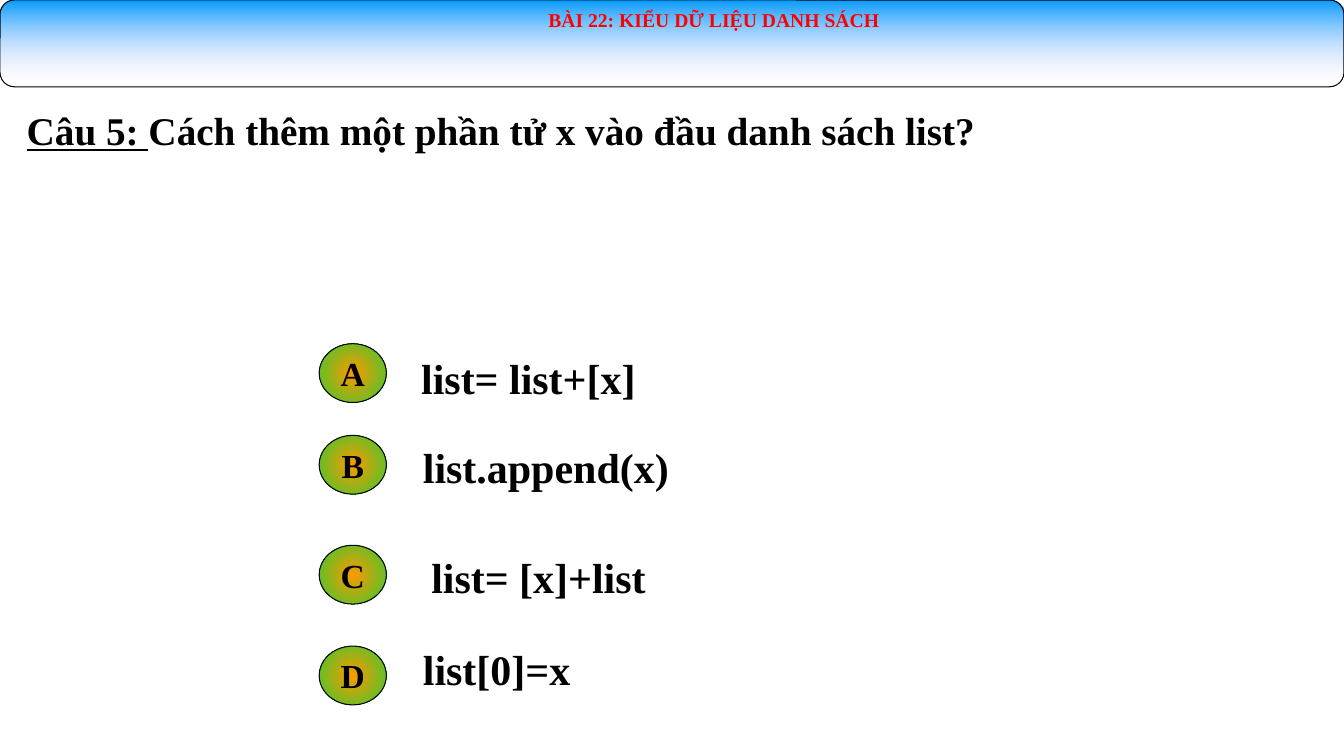
"""Build a multiple-choice quiz slide about adding an element to a list."""
from dataclasses import dataclass

from lxml.etree import SubElement
from pptx import Presentation
from pptx.dml.color import RGBColor
from pptx.enum.shapes import MSO_SHAPE
from pptx.enum.text import MSO_ANCHOR, MSO_AUTO_SIZE, PP_ALIGN
from pptx.oxml.ns import qn
from pptx.util import Pt

TITLE = "BÀI 22: KIỂU DỮ LIỆU DANH SÁCH"
QUESTION = ("Câu 5: ", "Cách thêm một phần tử x vào đầu danh sách list?")
ANSWERS = [
    {"letter": "A", "text": "list= list+[x]", "badge_top": 245.5, "box": (293.8, 252, 169, 40), "spacing": 0.9},
    {"letter": "B", "text": "list.append(x)", "badge_top": 311, "box": (295, 311.8, 192, 44), "spacing": 1.0},
    {"letter": "C", "text": "list= [x]+list", "badge_top": 389.5, "box": (301, 390.2, 169, 44), "spacing": 1.0},
    {"letter": "D", "text": "list[0]=x", "badge_top": 461.5, "box": (295, 460, 121, 40), "spacing": 0.9},
]
SLIDE = (960, 540)
BANNER = (0, 0, 960, 62)
TITLE_BOX = (144, 2, 732, 60)
QUESTION_BOX = (12, 76.5, 948, 38)
BADGE_LEFT, BADGE_W, BADGE_H = 228, 48, 42


@dataclass(frozen=True)
class Theme:
    """Colours, font and type sizes of the slide."""
    font: str = "Times New Roman"
    ink: str = "000000"
    title: str = "FF0000"
    banner: tuple = ("0099FF", "FFE5FF")
    badge: tuple = ("FF9900", "33CC33")
    title_size: int = 14
    badge_size: int = 24
    question_size: int = 28
    answer_size: int = 30
    line: float = 0.75


T = Theme()


def pts(box):
    """Turn a box in points into lengths."""
    return [Pt(v) for v in box]


def style(p, size, color=T.ink):
    """Format every run of a paragraph."""
    for r in p.runs:
        r.font.name, r.font.size, r.font.bold = T.font, Pt(size), True
        r.font.color.rgb = RGBColor.from_string(color)


def add_gradient_shape(s, kind, box, colors):
    """Add an outlined shape with a two-colour vertical gradient."""
    sp = s.shapes.add_shape(kind, *pts(box))
    sp.shadow.inherit = False
    sp.line.color.rgb = RGBColor.from_string(T.ink)
    sp.line.width = Pt(T.line)
    sp.fill.gradient()
    sp.fill.gradient_angle = 270
    for stop, position, color in zip(sp.fill.gradient_stops, (0, 1), colors):
        stop.position = position
        stop.color.rgb = RGBColor.from_string(color)
    return sp


def add_banner(s):
    """Add the header band that fades to transparent."""
    sp = add_gradient_shape(s, MSO_SHAPE.ROUNDED_RECTANGLE, BANNER, T.banner)
    last = sp._element.spPr.findall(".//" + qn("a:srgbClr"))[1]
    SubElement(last, qn("a:alpha"), val="0")


def add_badge(s, letter, top):
    """Add an answer letter on a radially shaded ellipse."""
    sp = add_gradient_shape(s, MSO_SHAPE.OVAL, (BADGE_LEFT, top, BADGE_W, BADGE_H), T.badge)
    grad = sp._element.spPr.find(qn("a:gradFill"))
    grad.remove(grad.find(qn("a:lin")))
    radial = SubElement(grad, qn("a:path"), path="circle")
    SubElement(radial, qn("a:fillToRect"), {side: "50000" for side in "ltrb"})
    tf = sp.text_frame
    tf.text = letter
    tf.vertical_anchor = MSO_ANCHOR.MIDDLE
    tf.paragraphs[0].alignment = PP_ALIGN.CENTER
    style(tf.paragraphs[0], T.badge_size)


def add_text(s, parts, box, size, spacing):
    """Add a one-paragraph text box with a run for each part."""
    tf = s.shapes.add_textbox(*pts(box)).text_frame
    tf.word_wrap = True
    tf.auto_size = MSO_AUTO_SIZE.SHAPE_TO_FIT_TEXT
    p = tf.paragraphs[0]
    p.line_spacing = spacing
    for part in parts:
        p.add_run().text = part
    style(p, size)
    return p


def set_title(s):
    """Place the title placeholder over the banner."""
    title = s.shapes.title
    title.left, title.top, title.width, title.height = pts(TITLE_BOX)
    tf = title.text_frame
    tf.text = TITLE
    tf.auto_size = MSO_AUTO_SIZE.NONE
    tf.vertical_anchor = MSO_ANCHOR.TOP
    tf.paragraphs[0].alignment = PP_ALIGN.CENTER
    style(tf.paragraphs[0], T.title_size, T.title)
    s.shapes._spTree.append(title._element)


def main():
    """Create and save the slide."""
    prs = Presentation()
    prs.slide_width, prs.slide_height = pts(SLIDE)
    s = prs.slides.add_slide(prs.slide_layouts[5])
    add_banner(s)
    set_title(s)
    question = add_text(s, QUESTION, QUESTION_BOX, T.question_size, 0.9)
    question.runs[0].font.underline = True
    for a in ANSWERS:
        add_badge(s, a["letter"], a["badge_top"])
        add_text(s, [a["text"]], a["box"], T.answer_size, a["spacing"])
    prs.save("out.pptx")


if __name__ == "__main__":
    main()
